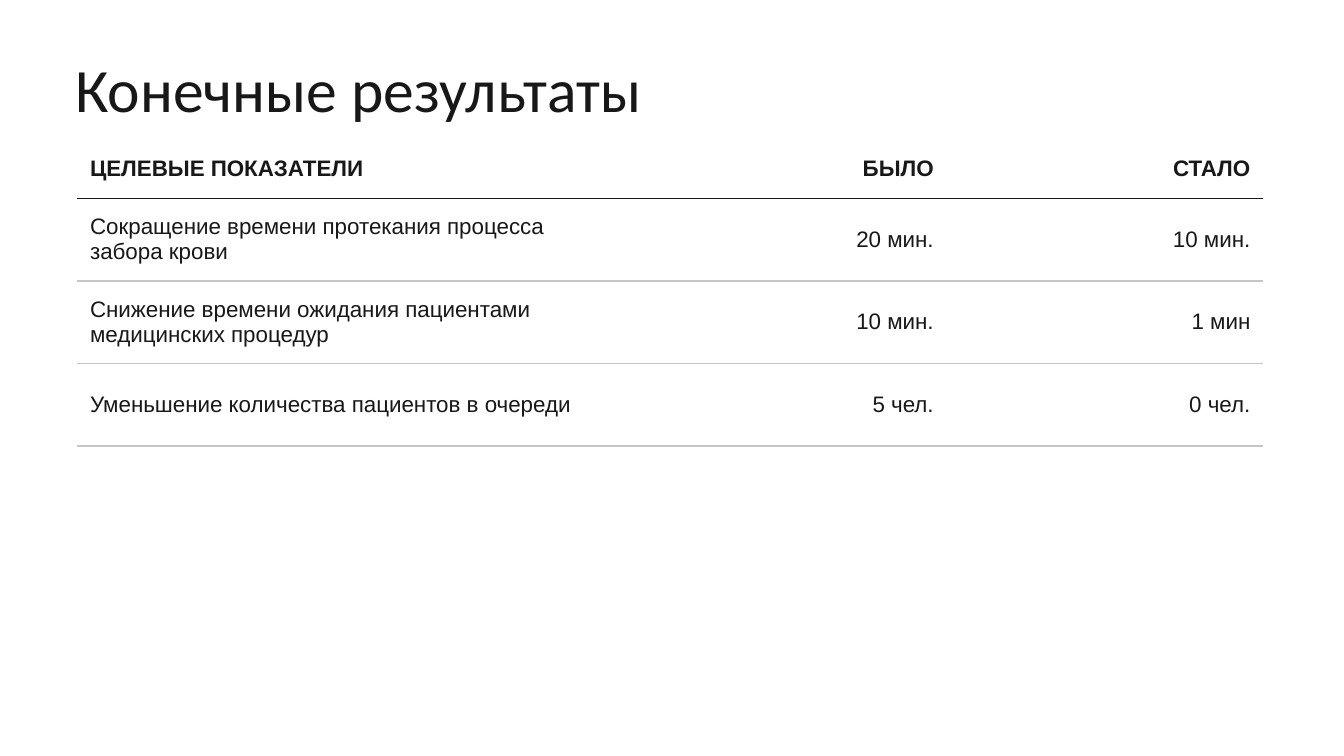
from lxml import etree
from pptx import Presentation
from pptx.dml.color import RGBColor
from pptx.enum.text import MSO_ANCHOR, PP_ALIGN
from pptx.oxml.ns import qn
from pptx.util import Cm, Pt

TITLE = "Конечные результаты"
ROWS = [
    ("ЦЕЛЕВЫЕ ПОКАЗАТЕЛИ", "БЫЛО", "СТАЛО"),
    ("Сокращение времени протекания процесса забора крови", "20 мин.", "10 мин."),
    ("Снижение времени ожидания пациентами медицинских процедур", "10 мин.", "1 мин"),
    ("Уменьшение количества пациентов в очереди", "5 чел.", "0 чел."),
]
WIDTHS = (14, 7.9, 7.98)
HEAD, BODY = 1.47, 2.08

DARK = RGBColor(0x18, 0x18, 0x18)
GREY = RGBColor(0xC5, 0xC5, 0xC5)
LEFT, RIGHT = PP_ALIGN.LEFT, PP_ALIGN.RIGHT
MIDDLE = MSO_ANCHOR.MIDDLE


def write(frame, text, font="Arial", size=16, bold=False, align=LEFT, space=1.0):
    para = frame.paragraphs[0]
    para.alignment = align
    para.line_spacing = space
    run = para.add_run()
    run.text = text
    run.font.name = font
    run.font.size = Pt(size)
    run.font.bold = bold
    run.font.color.rgb = DARK


def edge(cell, **sides):
    props = cell._tc.get_or_add_tcPr()
    for spot, side in enumerate("LRTB"):
        line = etree.Element(qn(f"a:ln{side}"))
        if side in sides:
            color, width = sides[side]
            line.set("w", str(Pt(width)))
            fill = etree.SubElement(line, qn("a:solidFill"))
            etree.SubElement(fill, qn("a:srgbClr"), val=str(color))
        else:
            etree.SubElement(line, qn("a:noFill"))
        props.insert(spot, line)


def main():
    deck = Presentation()
    deck.slide_width, deck.slide_height = Cm(33.87), Cm(19.05)
    slide = deck.slides.add_slide(deck.slide_layouts[6])

    title = slide.shapes.add_textbox(Cm(1.65), Cm(1.32), Cm(32.18), Cm(2.01))
    title.text_frame.word_wrap = True
    title.text_frame.vertical_anchor = MIDDLE
    write(title.text_frame, TITLE, font="Calibri", size=44, space=0.9)

    high = [HEAD] + [BODY] * (len(ROWS) - 1)
    table = slide.shapes.add_table(
        len(ROWS), len(WIDTHS), Cm(1.95), Cm(3.53), Cm(sum(WIDTHS)), Cm(sum(high))
    ).table
    table.first_row = table.horz_banding = False
    for col, width in zip(table.columns, WIDTHS):
        col.width = Cm(width)

    rules = [(DARK, 1.5)] + [(GREY, 1)] * (len(ROWS) - 1)
    for r, texts in enumerate(ROWS):
        table.rows[r].height = Cm(high[r])
        for c, text in enumerate(texts):
            cell = table.cell(r, c)
            cell.vertical_anchor = MIDDLE
            cell.margin_left = cell.margin_right = Cm(0.32)
            cell.margin_top = cell.margin_bottom = Cm(0.16)
            cell.fill.background()
            sides = {"B": rules[r]}
            if r:
                sides["T"] = rules[r - 1]
            edge(cell, **sides)
            write(cell.text_frame, text, bold=r == 0, align=RIGHT if c else LEFT)

    deck.save("out.pptx")


if __name__ == "__main__":
    main()
